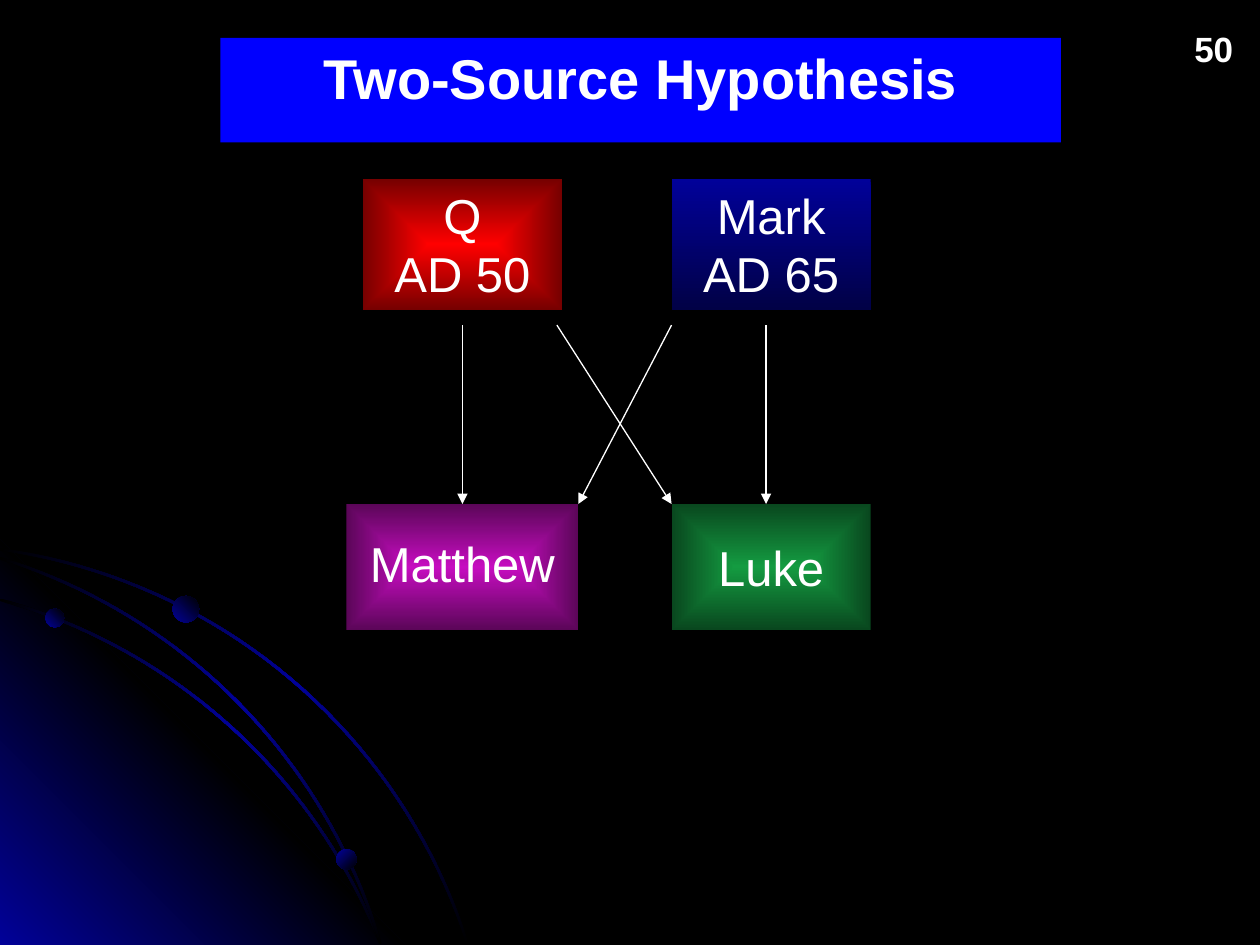
from math import atan2, cos, dist, sin, sqrt

from lxml import etree
from pptx import Presentation
from pptx.dml.color import RGBColor
from pptx.enum.shapes import MSO_CONNECTOR, MSO_SHAPE
from pptx.enum.text import MSO_ANCHOR, PP_ALIGN
from pptx.oxml import parse_xml
from pptx.oxml.ns import nsdecls, qn
from pptx.util import Inches, Pt

FONT = "Arial"
WHITE, BLACK, NAVY = "FFFFFF", "000000", "010199"
SLIDE_W, SLIDE_H = 10, 7.5

# Orbits are circular arcs of one radius, each given by its two ends
ORBIT_RADIUS, ORBIT_WIDTH, ORBIT_STEPS = 4.55, 0.02, 40
ORBITS = [((0, 4.36), (3.71, 7.49)),
          ((0, 4.76), (3.02, 7.49)),
          ((0, 4.43), (3.02, 7.49))]
# Planets: left, top, diameter, gradient angle
PLANETS = [(0.36, 4.83, 0.15, 315), (2.67, 6.74, 0.16, 45), (1.37, 4.73, 0.21, 315)]
GLOW_SIZE = 3.22

# Rows and columns of the diagram
SOURCE_Y, SOURCE_H = 1.42, 1.04
GOSPEL_Y, GOSPEL_H = 4, 1
BOX_W, MATTHEW_W = 1.58, 1.84
Q_X, MATTHEW_X, RIGHT_X = 2.88, 2.75, 5.33
ARROW_Y = 2.58


def rgb(value):
    return RGBColor.from_string(value)


def set_gradient(sp, colors, angle=None):
    """Spread colours evenly, along an angle or outward from the centre."""
    step = 100000 // (len(colors) - 1)
    stops = "".join(f'<a:gs pos="{i * step}"><a:srgbClr val="{c}"/></a:gs>'
                    for i, c in enumerate(colors))
    if angle is None:
        way = ('<a:path path="rect"><a:fillToRect l="50000" t="50000" '
               'r="50000" b="50000"/></a:path>')
    else:
        way = f'<a:lin ang="{angle * 60000}" scaled="0"/>'
    sp.fill.background()
    no_fill = sp._element.spPr.find(qn("a:noFill"))
    no_fill.getparent().replace(no_fill, parse_xml(
        f'<a:gradFill {nsdecls("a")} rotWithShape="1"><a:gsLst>{stops}</a:gsLst>{way}</a:gradFill>'))


def make_plain(sp):
    sp.shadow.inherit = False
    sp.line.fill.background()
    return sp


def add_shape(s, kind, x, y, w, h):
    return make_plain(s.shapes.add_shape(kind, Inches(x), Inches(y), Inches(w), Inches(h)))


def add_outline(s, points, colors, angle):
    start, *rest = [(Inches(x), Inches(y)) for x, y in points]
    fb = s.shapes.build_freeform(*start)
    fb.add_line_segments(rest, close=True)
    set_gradient(make_plain(fb.convert_to_shape()), colors, angle)


def add_orbit(s, start, end):
    """Draw a thin band along the arc that bulges to the upper right."""
    (x1, y1), (x2, y2) = start, end
    chord = dist(start, end)
    drop = sqrt(ORBIT_RADIUS ** 2 - (chord / 2) ** 2)
    cx = (x1 + x2) / 2 - drop * (y2 - y1) / chord
    cy = (y1 + y2) / 2 + drop * (x2 - x1) / chord
    first, last = atan2(y1 - cy, x1 - cx), atan2(y2 - cy, x2 - cx)
    angles = [first + (last - first) * i / ORBIT_STEPS for i in range(ORBIT_STEPS + 1)]

    def edge(radius):
        return [(cx + radius * cos(a), cy + radius * sin(a)) for a in angles]

    outer = edge(ORBIT_RADIUS + ORBIT_WIDTH / 2)
    inner = edge(ORBIT_RADIUS - ORBIT_WIDTH / 2)
    add_outline(s, outer + inner[::-1], [BLACK, NAVY, BLACK], 45)


def set_text(sp, lines, size, bold=False, anchor=MSO_ANCHOR.TOP, align=PP_ALIGN.CENTER):
    tf = sp.text_frame
    tf.vertical_anchor = anchor
    tf.text = "\n".join(lines)
    for p in tf.paragraphs:
        p.alignment = align
        p.font.name = FONT
        p.font.size = Pt(size)
        p.font.bold = bold
        p.font.color.rgb = rgb(WHITE)


def add_source(s, x, lines, colors, angle=None):
    sp = add_shape(s, MSO_SHAPE.RECTANGLE, x, SOURCE_Y, BOX_W, SOURCE_H)
    set_gradient(sp, colors, angle)
    set_text(sp, lines, 28)


def add_gospel(s, x, w, name, colors):
    sp = add_shape(s, MSO_SHAPE.RECTANGLE, x, GOSPEL_Y, w, GOSPEL_H)
    set_gradient(sp, colors)
    set_text(sp, [name], 28, anchor=MSO_ANCHOR.MIDDLE)
    return sp


def add_arrow(s, x1, x2):
    line = s.shapes.add_connector(MSO_CONNECTOR.STRAIGHT, Inches(x1), Inches(ARROW_Y),
                                  Inches(x2), Inches(GOSPEL_Y))
    line.line.color.rgb = rgb(WHITE)
    line.line.width = Pt(0.75)
    etree.SubElement(line.line._get_or_add_ln(), qn("a:tailEnd"), type="triangle")
    etree.SubElement(line._element.spPr, qn("a:effectLst"))
    return line


def add_backdrop(s):
    s.background.fill.solid()
    s.background.fill.fore_color.rgb = rgb(BLACK)
    corner = [(0, SLIDE_H - GLOW_SIZE), (GLOW_SIZE, SLIDE_H), (0, SLIDE_H)]
    add_outline(s, corner, [NAVY, BLACK, NAVY], 315)
    for start, end in ORBITS:
        add_orbit(s, start, end)
    for x, y, size, angle in PLANETS:
        set_gradient(add_shape(s, MSO_SHAPE.OVAL, x, y, size, size), [NAVY, BLACK], angle)


def add_heading(s):
    number = s.shapes.add_textbox(Inches(9.38), Inches(0.17), Inches(0.51), Inches(0.44))
    set_text(number, ["50"], 20, bold=True, align=PP_ALIGN.LEFT)
    title = add_shape(s, MSO_SHAPE.RECTANGLE, 1.75, 0.3, 6.67, 0.83)
    title.fill.solid()
    title.fill.fore_color.rgb = rgb("0000FF")
    set_text(title, ["Two-Source Hypothesis"], 32, bold=True)


def add_diagram(s):
    # Sources above, gospels below
    add_source(s, Q_X, ["Q", "AD 50"], ["FF0000", "760000"])
    add_source(s, RIGHT_X, ["Mark", "AD 65"], [NAVY, "010146"], 90)
    add_gospel(s, RIGHT_X, BOX_W, "Luke", ["149B41", "09471E"])
    matthew = add_gospel(s, MATTHEW_X, MATTHEW_W, "Matthew", ["C60DC0", "5B0658"])
    matthew.text_frame.margin_bottom = Inches(0.11)

    # Each source feeds both gospels
    matthew_mid, luke_mid = MATTHEW_X + MATTHEW_W / 2, 6.08
    add_arrow(s, matthew_mid, matthew_mid).end_connect(matthew, 0)
    add_arrow(s, luke_mid, luke_mid)
    add_arrow(s, 4.42, RIGHT_X)
    add_arrow(s, RIGHT_X, MATTHEW_X + MATTHEW_W)


def main():
    prs = Presentation()
    prs.slide_width, prs.slide_height = Inches(SLIDE_W), Inches(SLIDE_H)
    s = prs.slides.add_slide(prs.slide_layouts[6])
    add_backdrop(s)
    add_heading(s)
    add_diagram(s)
    prs.save("out.pptx")


if __name__ == "__main__":
    main()
